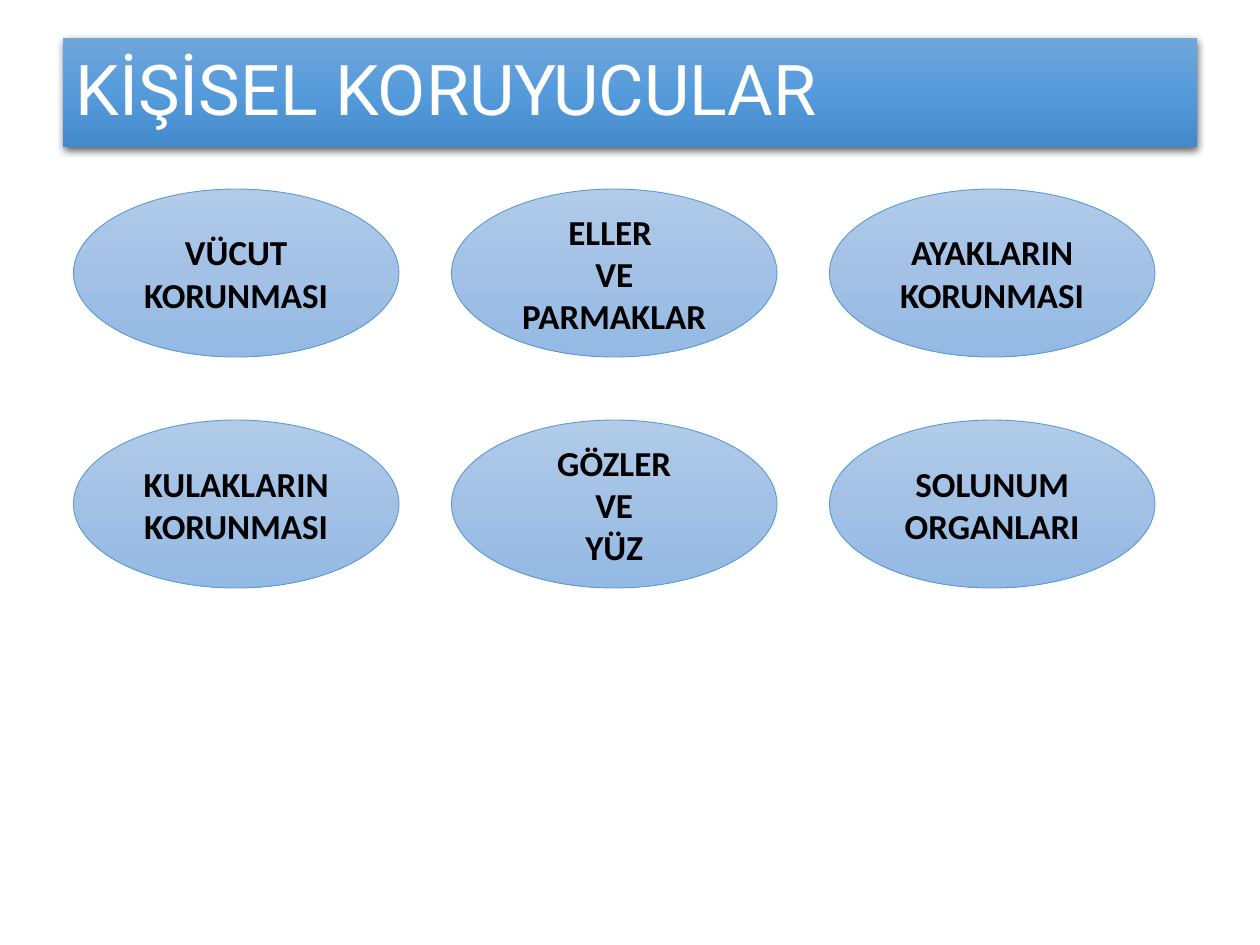
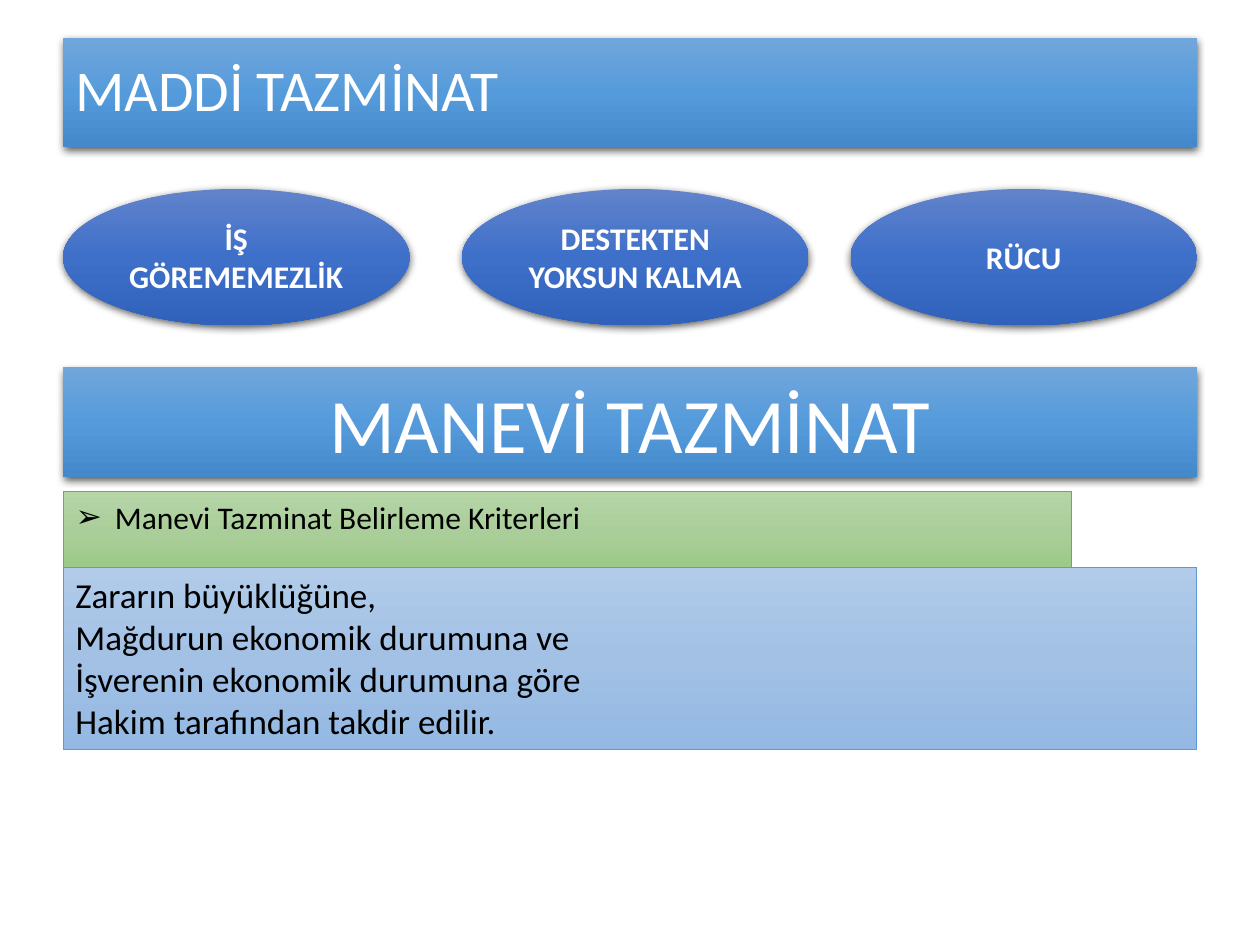
"""Build two slides on personal protection and compensation."""
from copy import deepcopy

from lxml.etree import SubElement
from pptx import Presentation
from pptx.dml.color import RGBColor
from pptx.enum.shapes import MSO_SHAPE
from pptx.enum.text import MSO_ANCHOR, MSO_AUTO_SIZE, PP_ALIGN
from pptx.oxml.ns import qn
from pptx.util import Pt

GUARDS = [
    ["VÜCUT KORUNMASI", "ELLER \vVE PARMAKLAR", "AYAKLARIN KORUNMASI"],
    ["KULAKLARIN KORUNMASI", "GÖZLER\vVE\vYÜZ", "SOLUNUM ORGANLARI"],
]
CLAIMS = [
    (36, "İŞ GÖREMEMEZLİK"),
    (264, "DESTEKTEN YOKSUN KALMA"),
    (486, "RÜCU"),
]
RULES = [
    "Zararın büyüklüğüne,",
    "Mağdurun ekonomik durumuna ve",
    "İşverenin ekonomik durumuna göre",
    "Hakim tarafından takdir edilir.",
]

WHITE = RGBColor(0xFF, 0xFF, 0xFF)
BLACK = RGBColor(0, 0, 0)
SKY = [RGBColor(0x71, 0xA6, 0xDB), RGBColor(0x55, 0x9B, 0xDB), RGBColor(0x44, 0x8A, 0xCA)]
PALE = [RGBColor(0xB1, 0xCB, 0xE9), RGBColor(0xA3, 0xC1, 0xE5), RGBColor(0x93, 0xB9, 0xE4)]
DEEP = [RGBColor(0x61, 0x83, 0xCB), RGBColor(0x3E, 0x70, 0xCA), RGBColor(0x30, 0x62, 0xBB)]
GREEN = [RGBColor(0xB5, 0xD5, 0xA7), RGBColor(0xAA, 0xCE, 0x9A), RGBColor(0x9C, 0xC9, 0x87)]
EDGE = RGBColor(0x5B, 0x9B, 0xD5)
LEAF = RGBColor(0x70, 0xAD, 0x47)

LEFT, WIDE, BAND = 36, 648, 62.6
LEAD = 108


def place(shape, box):
    shape.left, shape.top, shape.width, shape.height = map(Pt, box)


def paint(shape, shades, edge=None):
    """Fill with a vertical gradient; outline it, or give it a shadow."""
    fill = shape.fill
    fill.gradient()
    props = shape._element.spPr
    stops = props.find(".//" + qn("a:gsLst"))
    stops.append(deepcopy(stops[0]))
    for stop, shade, pos in zip(fill.gradient_stops, shades, (0, 0.5, 1)):
        stop.color.rgb = shade
        stop.position = pos
    fill.gradient_angle = 270
    if edge:
        shape.line.color.rgb = edge
        shape.line.width = Pt(0.5)
    else:
        shape.line.fill.background()
    if hasattr(shape, "shadow"):
        shape.shadow.inherit = False
    if not edge:
        glow = SubElement(props.find(qn("a:effectLst")), qn("a:outerShdw"),
                          blurRad=str(Pt(4.5)), dist=str(Pt(1.5)),
                          dir="5400000", algn="ctr", rotWithShape="0")
        tint = SubElement(glow, qn("a:srgbClr"), val="000000")
        SubElement(tint, qn("a:alpha"), val="63000")


def write(shape, text, size, color, align=PP_ALIGN.CENTER, bold=False,
          font="Calibri", anchor=MSO_ANCHOR.MIDDLE, fit=MSO_AUTO_SIZE.NONE):
    """Set the text and format every run."""
    frame = shape.text_frame
    frame.text = text
    frame.word_wrap = True
    frame.auto_size = fit
    frame.vertical_anchor = anchor
    for para in frame.paragraphs:
        para.alignment = align
        para.space_before = Pt(0)
        for run in para.runs:
            run.font.name = font
            run.font.size = Pt(size)
            run.font.bold = bold
            run.font.color.rgb = color


def add(slide, kind, box, shades, edge=None):
    shape = slide.shapes.add_shape(kind, *map(Pt, box))
    paint(shape, shades, edge)
    return shape


def head(slide, text, size, font="Calibri"):
    """Style the title as a band."""
    title = slide.shapes.title
    place(title, (LEFT, 21.6, WIDE, BAND))
    paint(title, SKY)
    write(title, text, size, WHITE, PP_ALIGN.LEFT, font=font)
    title.text_frame.paragraphs[0].line_spacing = 0.9


def guard(deck):
    """Lay out the grid of protected body parts."""
    slide = deck.slides.add_slide(deck.slide_layouts[5])
    head(slide, "KİŞİSEL KORUYUCULAR", 40, "Roboto")
    for row, names in enumerate(GUARDS):
        for col, name in enumerate(names):
            box = (42 + 216 * col, LEAD + 132 * row, 186, 96)
            oval = add(slide, MSO_SHAPE.OVAL, box, PALE, EDGE)
            write(oval, name, 20, BLACK, bold=True)


def claim(deck):
    """Lay out the kinds of compensation and their criteria."""
    slide = deck.slides.add_slide(deck.slide_layouts[1])
    head(slide, "MADDİ TAZMİNAT", 33)
    for left, name in CLAIMS:
        oval = add(slide, MSO_SHAPE.OVAL, (left, LEAD, 198, 78), DEEP)
        write(oval, name, 18, WHITE, bold=True)
    band = add(slide, MSO_SHAPE.RECTANGLE, (LEFT, 210, WIDE, BAND), SKY)
    write(band, "MANEVİ TAZMİNAT", 44, WHITE)

    grow = dict(align=PP_ALIGN.LEFT, anchor=MSO_ANCHOR.TOP,
                fit=MSO_AUTO_SIZE.SHAPE_TO_FIT_TEXT)
    topic = slide.placeholders[1]
    place(topic, (LEFT, 280.8, 576, 29.1))
    paint(topic, GREEN, LEAF)
    write(topic, "Manevi Tazminat Belirleme Kriterleri", 18, BLACK, **grow)
    props = topic.text_frame.paragraphs[0]._p.get_or_add_pPr()
    props.set("marL", str(Pt(22.5)))
    props.set("indent", str(-Pt(22.5)))
    SubElement(props, qn("a:buChar"), char="➢")

    panel = add(slide, MSO_SHAPE.RECTANGLE, (LEFT, 324, WIDE, 104.4), PALE, EDGE)
    write(panel, "\n".join(RULES), 20, BLACK, **grow)


def main():
    deck = Presentation()
    deck.slide_width, deck.slide_height = Pt(720), Pt(540)
    guard(deck)
    claim(deck)
    deck.save("out.pptx")


if __name__ == "__main__":
    main()
